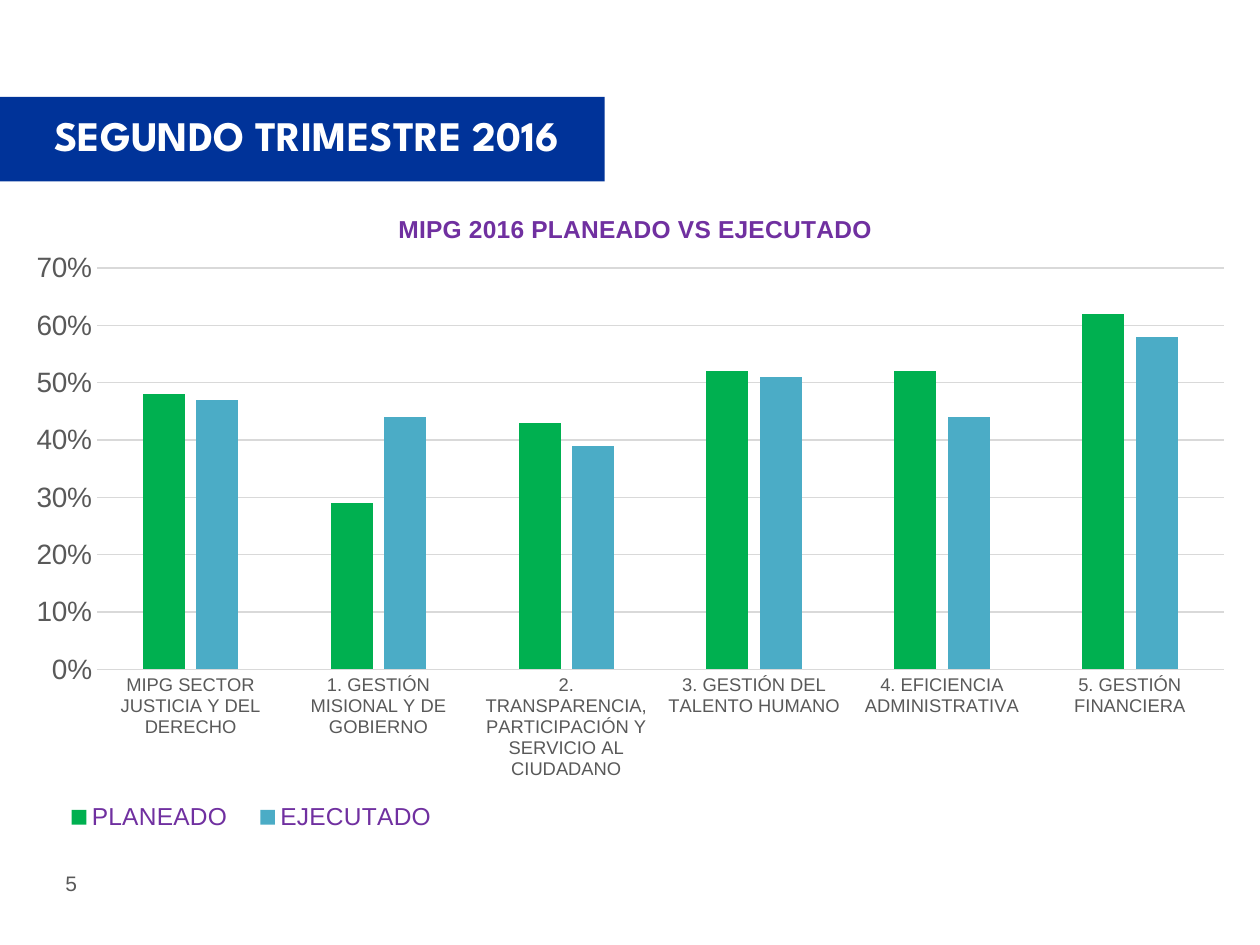
from lxml import etree
from pptx import Presentation
from pptx.chart import data
from pptx.dml import color
from pptx.enum import chart as ch, shapes, text
from pptx.oxml import ns
from pptx.util import Inches, Pt

HEADING = "SEGUNDO TRIMESTRE 2016"
PAGE_NUMBER = "5"
CHART_TITLE = "MIPG 2016 PLANEADO VS EJECUTADO"
COMPONENTS = [
    "MIPG SECTOR JUSTICIA Y DEL DERECHO",
    "1. GESTIÓN MISIONAL Y DE GOBIERNO",
    "2. TRANSPARENCIA, PARTICIPACIÓN Y SERVICIO AL CIUDADANO",
    "3. GESTIÓN DEL TALENTO HUMANO",
    "4. EFICIENCIA ADMINISTRATIVA",
    "5. GESTIÓN FINANCIERA",
]
PROGRESS = [
    ("PLANEADO", "00B050", (0.48, 0.29, 0.43, 0.52, 0.52, 0.62)),
    ("EJECUTADO", "4BACC6", (0.47, 0.44, 0.39, 0.51, 0.44, 0.58)),
]
BLUE, PURPLE, GRAY, RULE, WHITE = "003399", "7030A0", "595959", "D9D9D9", "FFFFFF"


def rgb(value):
    return color.RGBColor.from_string(value)


def style(font, size, shade, name="Arial", bold=False):
    font.size, font.name, font.bold = Pt(size), name, bold
    font.color.rgb = rgb(shade)


def rule(line):
    line.color.rgb = rgb(RULE)
    line.width = Pt(0.75)


def write(frame, words, align, *font):
    frame.word_wrap = True
    frame.vertical_anchor = text.MSO_ANCHOR.MIDDLE
    paragraph = frame.paragraphs[0]
    paragraph.alignment = align
    run = paragraph.add_run()
    run.text = words
    style(run.font, *font)


def place(element, index, inner=False, **fractions):
    for old in element.findall(ns.qn("c:layout")):
        element.remove(old)
    layout = etree.Element(ns.qn("c:layout"))
    manual = etree.SubElement(layout, ns.qn("c:manualLayout"))
    settings = {"layoutTarget": "inner"} if inner else {}
    settings.update(xMode="edge", yMode="edge", **fractions)
    for tag, value in settings.items():
        etree.SubElement(manual, ns.qn("c:" + tag)).set("val", str(value))
    element.insert(index, layout)


def add_progress_chart(slide):
    table = data.CategoryChartData(number_format="0%")
    table.categories = COMPONENTS
    for name, _, values in PROGRESS:
        table.add_series(name, values)
    chart = slide.shapes.add_chart(
        ch.XL_CHART_TYPE.COLUMN_CLUSTERED,
        Inches(0.08), Inches(1.45), Inches(9.83), Inches(5.22), table).chart
    style(chart.font, 10, "000000")

    plot = chart.plots[0]
    plot.gap_width, plot.overlap = 219, -27
    plot.vary_by_categories = False
    for series, (_, shade, _) in zip(plot.series, PROGRESS):
        series.format.fill.solid()
        series.format.fill.fore_color.rgb = rgb(shade)
        series.invert_if_negative = False

    components, percent = chart.category_axis, chart.value_axis
    for axis, size in ((components, 10.5), (percent, 16)):
        axis.major_tick_mark = axis.minor_tick_mark = ch.XL_TICK_MARK.NONE
        style(axis.tick_labels.font, size, GRAY)
    rule(components.format.line)
    percent.format.line.fill.background()
    percent.minimum_scale, percent.maximum_scale, percent.major_unit = 0, 0.7, 0.1
    percent.tick_labels.number_format = "0%"
    percent.tick_labels.number_format_is_linked = False
    rule(percent.major_gridlines.format.line)

    chart.has_title = True
    title_run = chart.chart_title.text_frame.paragraphs[0].add_run()
    title_run.text = CHART_TITLE
    style(title_run.font, 14, PURPLE, "Arial", True)
    chart.chart_title.include_layout = False

    chart.has_legend = True
    legend = chart.legend
    legend.position = ch.XL_LEGEND_POSITION.BOTTOM
    legend.include_in_layout = False
    style(legend.font, 14, PURPLE)

    place(chart.chart_title._element, 1, x=0.31, y=0.04)
    place(plot._element.getparent(), 0, True, x=0.07, y=0.13, w=0.91, h=0.61)
    place(legend._element, 1, x=0.03, y=0.93, w=0.33, h=0.07)


def main():
    deck = Presentation()
    deck.slide_width, deck.slide_height = Inches(10), Inches(7.5)
    slide = deck.slides.add_slide(deck.slide_layouts[6])

    number = slide.shapes.add_textbox(Inches(0.42), Inches(6.86), Inches(0.75), Inches(0.3))
    write(number.text_frame, PAGE_NUMBER, text.PP_ALIGN.LEFT, 12, GRAY)

    band = slide.shapes.add_shape(
        shapes.MSO_SHAPE.RECTANGLE, 0, Inches(0.77), Inches(4.8), Inches(0.67))
    band.shadow.inherit = False
    band.fill.solid()
    band.fill.fore_color.rgb = rgb(BLUE)
    band.line.fill.background()

    heading = slide.shapes.add_textbox(Inches(0.25), Inches(0.83), Inches(4.37), Inches(0.48))
    write(heading.text_frame, HEADING, text.PP_ALIGN.CENTER, 24, WHITE, "League Spartan", True)

    add_progress_chart(slide)
    deck.save("out.pptx")


if __name__ == "__main__":
    main()
